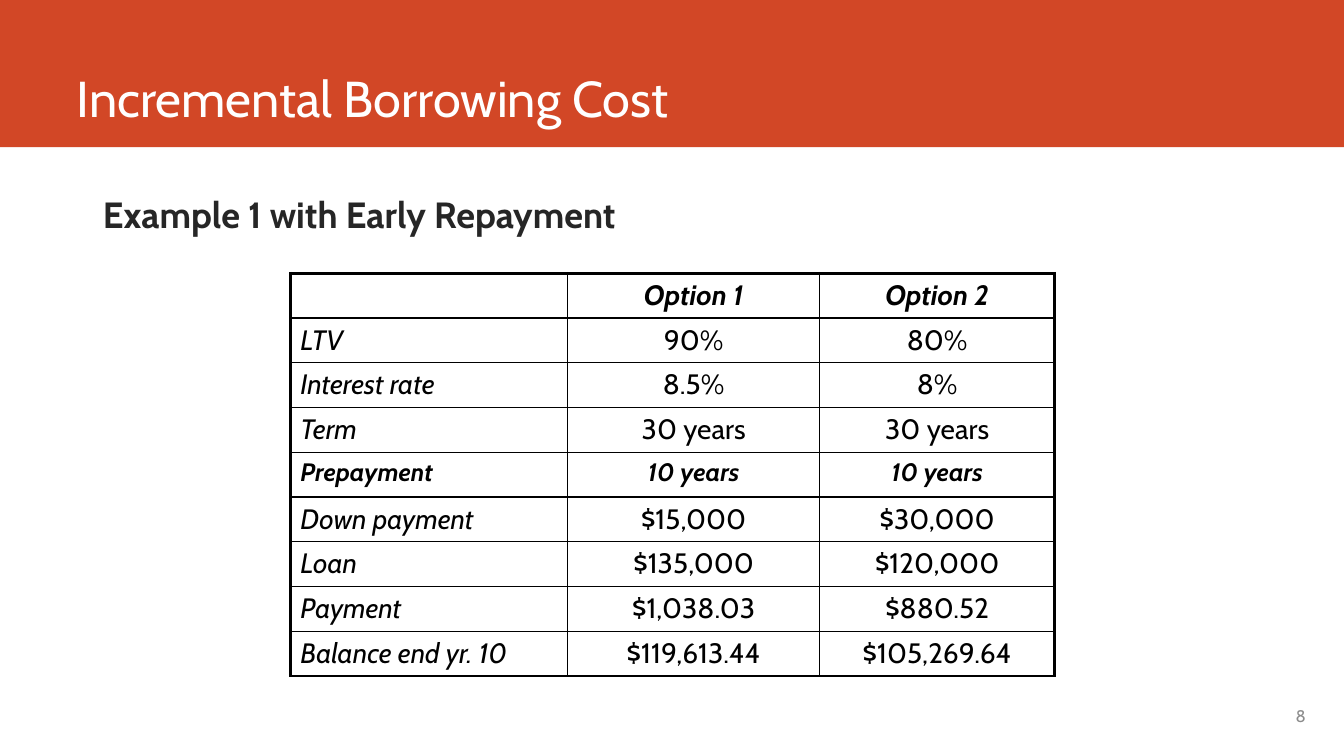
from dataclasses import dataclass

from lxml.etree import SubElement
from pptx import Presentation
from pptx.dml.color import RGBColor
from pptx.enum.shapes import MSO_SHAPE
from pptx.enum.text import MSO_ANCHOR, MSO_AUTO_SIZE, PP_ALIGN
from pptx.oxml.ns import qn
from pptx.util import Inches, Pt


@dataclass(frozen=True)
class Theme:
    font: str = "Cabin"
    band: str = "D24726"
    white: str = "FFFFFF"
    dark: str = "262626"
    gray: str = "8C8C8C"
    black: str = "000000"
    title: int = 36
    head: int = 26
    cell: int = 20
    key: int = 18
    page: int = 12
    thin: float = 1
    thick: float = 2.25


@dataclass(frozen=True)
class Style:
    size: int
    color: str
    bold: bool = False
    slant: bool = False


@dataclass(frozen=True)
class Row:
    label: str
    first: str
    second: str


THEME = Theme()
ROWS = [
    Row("", "Option 1", "Option 2"),
    Row("LTV", "90%", "80%"),
    Row("Interest rate", "8.5%", "8%"),
    Row("Term", "30 years", "30 years"),
    Row("Prepayment", "10 years", "10 years"),
    Row("Down payment", "$15,000", "$30,000"),
    Row("Loan", "$135,000", "$120,000"),
    Row("Payment", "$1,038.03", "$880.52"),
    Row("Balance end yr. 10", "$119,613.44", "$105,269.64"),
]
WIDTHS = [2.75, 2.5, 2.33]
HEIGHT = 4.0


def place(shape, left: float, top: float, width: float, height: float) -> None:
    shape.left, shape.top = Inches(left), Inches(top)
    shape.width, shape.height = Inches(width), Inches(height)


def write(para, text: str, style: Style, align=PP_ALIGN.LEFT) -> None:
    para.alignment = align
    run = para.add_run()
    run.text = text
    font = run.font
    font.name, font.size = THEME.font, Pt(style.size)
    font.bold, font.italic = style.bold, style.slant
    font.color.rgb = RGBColor.from_string(style.color)


def frame(shape, anchor):
    text = shape.text_frame
    text.word_wrap = True
    text.auto_size = MSO_AUTO_SIZE.NONE
    text.vertical_anchor = anchor
    return text.paragraphs[0]


def edge(cell, sides: dict[str, float]) -> None:
    props = cell._tc.get_or_add_tcPr()
    for side, width in sides.items():
        line = SubElement(props, qn(f"a:{side}"), w=str(Pt(width)))
        fill = SubElement(line, qn("a:solidFill"))
        SubElement(fill, qn("a:srgbClr"), val=THEME.black)


def draw_table(slide) -> None:
    shape = slide.shapes.add_table(
        len(ROWS), len(WIDTHS), Inches(2.88), Inches(2.71),
        Inches(sum(WIDTHS)), Inches(HEIGHT))
    table = shape.table
    table.first_row = table.horz_banding = False
    for col, width in zip(table.columns, WIDTHS):
        col.width = Inches(width)
    last_row, last_col = len(ROWS) - 1, len(WIDTHS) - 1
    for r, row in enumerate(ROWS):
        table.rows[r].height = Inches(HEIGHT / len(ROWS))
        key = row.label == "Prepayment"
        bold = key or r == 0
        for c, text in enumerate((row.label, row.first, row.second)):
            cell = table.cell(r, c)
            # Thick rim, thin inner lines
            rim = {"lnL": c == 0, "lnR": c == last_col,
                   "lnT": r == 0, "lnB": r == last_row}
            edge(cell, {side: THEME.thick if out else THEME.thin
                        for side, out in rim.items()})
            cell.fill.background()
            if text:
                style = Style(THEME.key if key else THEME.cell, THEME.black,
                              bold, bold or c == 0)
                align = PP_ALIGN.CENTER if c else PP_ALIGN.LEFT
                write(cell.text_frame.paragraphs[0], text, style, align)


def main() -> None:
    deck = Presentation()
    deck.slide_width, deck.slide_height = Inches(13.33), Inches(7.5)
    slide = deck.slides.add_slide(deck.slide_layouts[1])
    title, body = slide.shapes.title, slide.placeholders[1]

    # Band behind the title
    band = slide.shapes.add_shape(
        MSO_SHAPE.RECTANGLE, 0, 0, deck.slide_width, Inches(1.46))
    band.shadow.inherit = False
    band.fill.solid()
    band.fill.fore_color.rgb = RGBColor.from_string(THEME.band)
    band.line.fill.background()
    title.element.addprevious(band.element)

    # Title
    place(title, 0.66, 0, 11.76, 1.32)
    para = frame(title, MSO_ANCHOR.BOTTOM)
    para.line_spacing = 0.9
    write(para, "Incremental Borrowing Cost", Style(THEME.title, THEME.white))

    # Heading without a bullet
    place(body, 0.92, 1.91, 11.5, 4.9)
    para = frame(body, MSO_ANCHOR.TOP)
    para.line_spacing = 0.9
    para.space_before = para.space_after = Pt(6)
    props = para._p.get_or_add_pPr()
    props.set("marL", "0")
    props.set("indent", "0")
    SubElement(props, qn("a:buNone"))
    write(para, "Example 1 with Early Repayment",
          Style(THEME.head, THEME.dark, bold=True))

    # Page number
    page = slide.shapes.add_textbox(
        Inches(9.47), Inches(6.9), Inches(3.58), Inches(0.4))
    write(frame(page, MSO_ANCHOR.MIDDLE), "8",
          Style(THEME.page, THEME.gray), PP_ALIGN.RIGHT)

    # Loan options
    draw_table(slide)
    deck.save("out.pptx")


if __name__ == "__main__":
    main()
